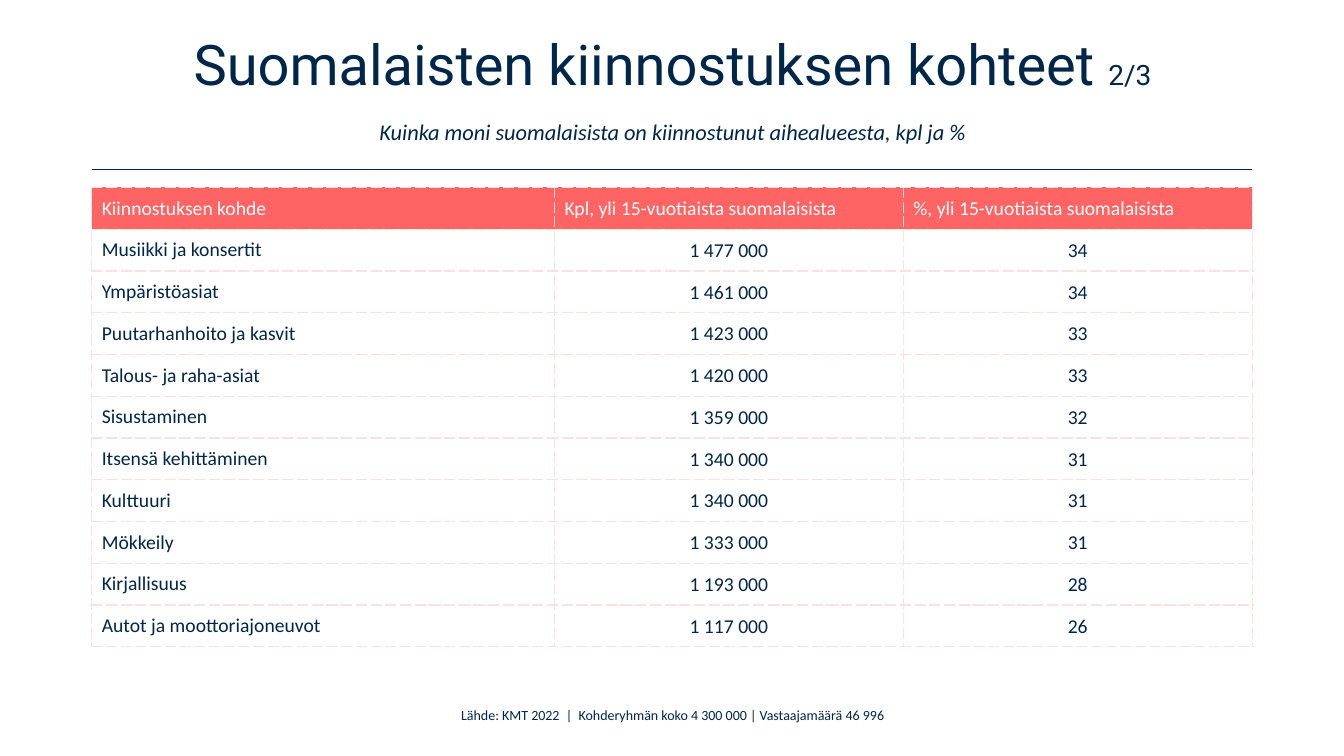
from dataclasses import dataclass

from lxml.etree import SubElement as Sub
from pptx import Presentation as Deck
from pptx.dml.color import RGBColor as Rgb
from pptx.enum.text import MSO_ANCHOR as Anchor, MSO_AUTO_SIZE as Fit, PP_ALIGN as Align
from pptx.enum.shapes import MSO_CONNECTOR as Link
from pptx.oxml import parse_xml as parse
from pptx.oxml.ns import nsdecls, qn
from pptx.util import Inches, Pt


@dataclass(frozen=True)
class Theme:
    navy: str = "002649"
    coral: str = "FF6464"
    blush: str = "FFE0E0"
    white: str = "FFFFFF"
    head: str = "Roboto"
    body: str = "Calibri"
    big: int = 40
    page: int = 20
    sub: int = 16
    cell: int = 14
    note: int = 10


THEME = Theme()
HEADS = ("Kiinnostuksen kohde", "Kpl, yli 15-vuotiaista suomalaisista",
         "%, yli 15-vuotiaista suomalaisista")
ROWS = (
    ("Musiikki ja konsertit", "1 477 000", "34"),
    ("Ympäristöasiat", "1 461 000", "34"),
    ("Puutarhanhoito ja kasvit", "1 423 000", "33"),
    ("Talous- ja raha-asiat", "1 420 000", "33"),
    ("Sisustaminen", "1 359 000", "32"),
    ("Itsensä kehittäminen", "1 340 000", "31"),
    ("Kulttuuri", "1 340 000", "31"),
    ("Mökkeily", "1 333 000", "31"),
    ("Kirjallisuus", "1 193 000", "28"),
    ("Autot ja moottoriajoneuvot", "1 117 000", "26"),
)
WIDTHS = (4.59, 3.46, 3.46)


def apply(item, form):
    for key, value in form.items():
        setattr(item, key, value)


def place(left, top, width, height):
    return dict(left=Inches(left), top=Inches(top),
                width=Inches(width), height=Inches(height))


def add_run(para, text, size, face=THEME.body, color=THEME.navy, italic=False):
    run = para.add_run()
    run.text = text
    apply(run.font, dict(size=Pt(size), name=face, bold=False, italic=italic))
    run.font.color.rgb = Rgb.from_string(color)


def add_title(slide):
    title = slide.shapes.title
    apply(title, place(0.92, 0.42, 11.5, 1.07))
    apply(title.text_frame, dict(word_wrap=True, vertical_anchor=Anchor.MIDDLE,
                                 auto_size=Fit.NONE))
    para = title.text_frame.paragraphs[0]
    apply(para, dict(alignment=Align.CENTER, line_spacing=Pt(35), space_after=Pt(18)))
    add_run(para, "Suomalaisten kiinnostuksen kohteet ", THEME.big, THEME.head)
    add_run(para, "2/3", THEME.page, THEME.head)
    para.add_line_break()
    add_run(para, "Kuinka moni suomalaisista on kiinnostunut aihealueesta, kpl ja %",
            THEME.sub, italic=True)


def add_rule(slide):
    rule = slide.shapes.add_connector(Link.STRAIGHT, Inches(0.91), Inches(1.68),
                                      Inches(12.42), Inches(1.68))
    rule.line.width = Pt(1)
    rule.line.color.rgb = Rgb.from_string(THEME.navy)
    Sub(rule._element.spPr, qn("a:effectLst"))


def add_edges(cell):
    props = cell._tc.get_or_add_tcPr()
    for spot, side in enumerate("LRTB"):
        props.insert(spot, parse(
            f'<a:ln{side} {nsdecls("a")} w="{Pt(1)}"><a:solidFill>'
            f'<a:srgbClr val="{THEME.blush}"/></a:solidFill>'
            f'<a:prstDash val="sysDash"/></a:ln{side}>'))


def fill_cell(cell, text, header, number):
    cell.vertical_anchor = Anchor.MIDDLE
    para = cell.text_frame.paragraphs[0]
    add_run(para, text, THEME.cell, color=THEME.white if header else THEME.navy)
    if header:
        cell.fill.solid()
        cell.fill.fore_color.rgb = Rgb.from_string(THEME.coral)
    else:
        cell.fill.background()
    if number:
        para.alignment = Align.CENTER
        thin = Inches(0.01)
        apply(cell, dict(margin_left=thin, margin_right=thin,
                         margin_top=thin, margin_bottom=0))
    add_edges(cell)


def add_grid(slide):
    data = (HEADS,) + ROWS
    box = place(0.91, 1.86, sum(WIDTHS), 4.56)
    table = slide.shapes.add_table(len(data), len(WIDTHS), **box).table
    apply(table, dict(first_row=False, horz_banding=False))
    for col, width in zip(table.columns, WIDTHS):
        col.width = Inches(width)
    for r, row in enumerate(data):
        for c, text in enumerate(row):
            fill_cell(table.cell(r, c), text, r == 0, r > 0 and c > 0)


def add_note(slide):
    frame = slide.shapes.add_textbox(**place(4.08, 6.96, 5.18, 0.27)).text_frame
    apply(frame, dict(word_wrap=True, auto_size=Fit.SHAPE_TO_FIT_TEXT))
    para = frame.paragraphs[0]
    para.alignment = Align.CENTER
    add_run(para, "Lähde: KMT 2022  |  Kohderyhmän koko 4 300 000 | Vastaajamäärä 46 996",
            THEME.note)


def main():
    deck = Deck()
    apply(deck, dict(slide_width=Inches(13.33), slide_height=Inches(7.5)))
    slide = deck.slides.add_slide(deck.slide_layouts[5])
    slide.background.fill.solid()
    slide.background.fill.fore_color.rgb = Rgb.from_string(THEME.white)
    for build in (add_title, add_rule, add_grid, add_note):
        build(slide)
    deck.save("out.pptx")


if __name__ == "__main__":
    main()
